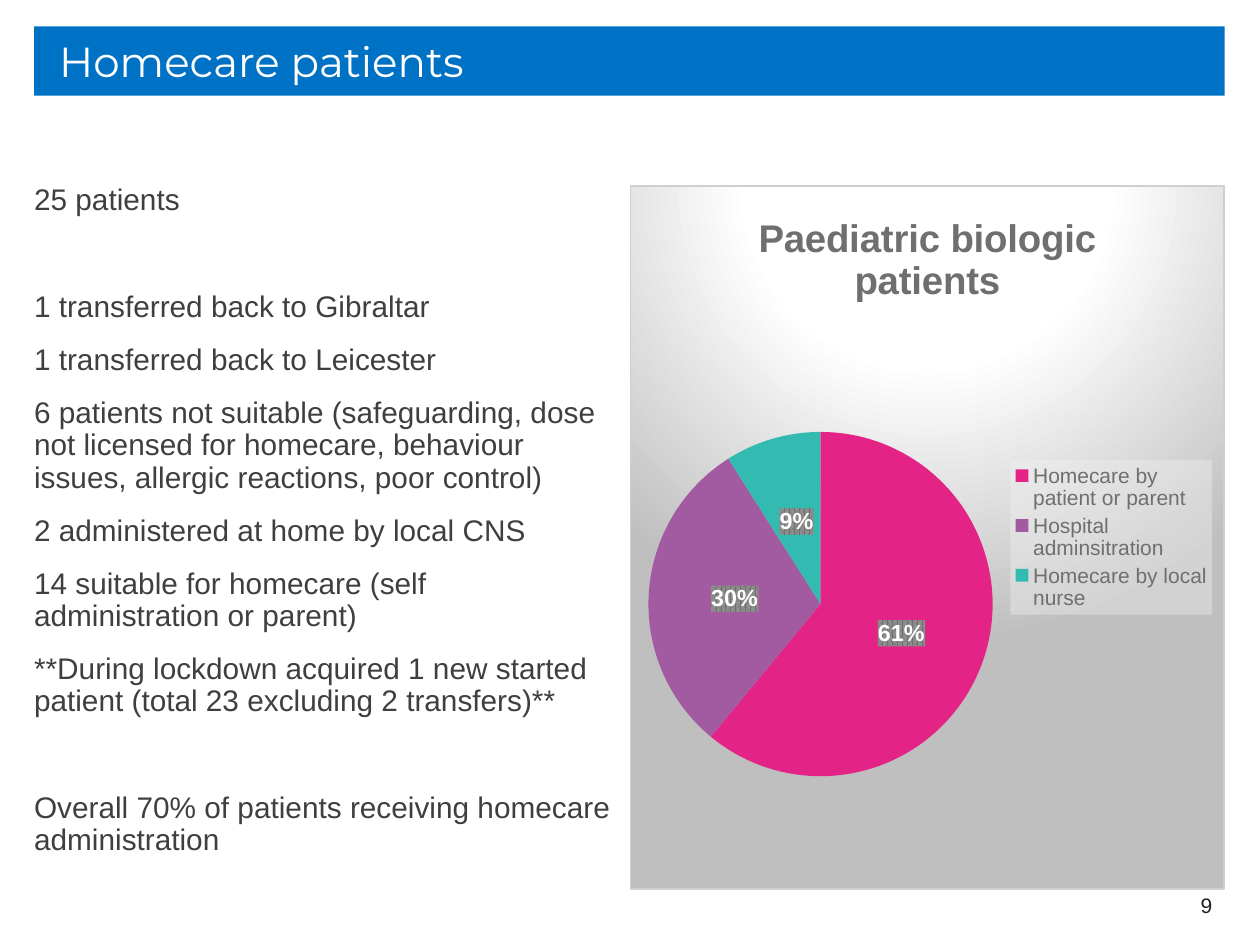
from dataclasses import dataclass

from lxml.etree import fromstring
from pptx import Presentation
from pptx.chart.data import CategoryChartData
from pptx.dml.color import RGBColor
from pptx.enum.chart import XL_CHART_TYPE, XL_LABEL_POSITION, XL_LEGEND_POSITION
from pptx.enum.shapes import MSO_SHAPE
from pptx.enum.text import MSO_ANCHOR, PP_ALIGN
from pptx.oxml.ns import qn
from pptx.util import Inches, Pt

NAMESPACES = (
    'xmlns:c="http://schemas.openxmlformats.org/drawingml/2006/chart" '
    'xmlns:a="http://schemas.openxmlformats.org/drawingml/2006/main"'
)
LEFT, RIGHT = 0.27, 9.72
CONTENT_TOP, CONTENT_HEIGHT = 1.47, 5.59
CHART_LEFT = 5
CHART_TITLE = "Paediatric biologic patients"


@dataclass
class Finding:
    text: str
    starts_group: bool = False


@dataclass
class Slice:
    label: str
    percent: int
    color: str


FINDINGS = [
    Finding("25 patients"),
    Finding("1 transferred back to Gibraltar", starts_group=True),
    Finding("1 transferred back to Leicester"),
    Finding("6 patients not suitable (safeguarding, dose not licensed for homecare, "
            "behaviour issues, allergic reactions, poor control)"),
    Finding("2 administered at home by local CNS"),
    Finding("14 suitable for homecare (self administration or parent)"),
    Finding("**During lockdown acquired 1 new started patient "
            "(total 23 excluding 2 transfers)**"),
    Finding("Overall 70% of patients receiving homecare administration", starts_group=True),
]
SLICES = [
    Slice("Homecare by patient or parent", 61, "E32486"),
    Slice("Hospital adminsitration", 30, "A25BA0"),
    Slice("Homecare by local nurse", 9, "33BBB1"),
]


def rgb(color: str) -> RGBColor:
    return RGBColor.from_string(color)


def style_font(font, size: float, color: str, name: str = "Arial", bold: bool = False) -> None:
    font.size, font.name, font.bold = Pt(size), name, bold
    font.color.rgb = rgb(color)


def chart_xml(body: str):
    """Parse a chart element after declaring its namespaces on the root."""
    tag, rest = body.split(">", 1)
    return fromstring(f"{tag} {NAMESPACES}>{rest}")


def manual_layout(x: float, y: float, w: float, h: float, target: str = ""):
    return chart_xml(
        f'<c:layout><c:manualLayout>{target}<c:xMode val="edge"/><c:yMode val="edge"/>'
        f'<c:x val="{x}"/><c:y val="{y}"/><c:w val="{w}"/><c:h val="{h}"/>'
        "</c:manualLayout></c:layout>"
    )


def replace_layout(parent, layout, index: int) -> None:
    for existing in parent.findall(qn("c:layout")):
        parent.remove(existing)
    parent.insert(index, layout)


def add_title_bar(slide) -> None:
    bar = slide.shapes.add_shape(MSO_SHAPE.RECTANGLE, Inches(LEFT), Inches(0.21),
                                 Inches(RIGHT - LEFT), Inches(0.55))
    bar.shadow.inherit = False
    bar.fill.solid()
    bar.fill.fore_color.rgb = rgb("0072C6")
    bar.line.fill.background()
    frame = bar.text_frame
    frame.text = "Homecare patients"
    frame.margin_left = Inches(0.2)
    frame.vertical_anchor = MSO_ANCHOR.MIDDLE
    heading = frame.paragraphs[0]
    heading.alignment = PP_ALIGN.LEFT
    style_font(heading.runs[0].font, 24, "FFFFFF", "Montserrat")


def add_findings(slide) -> None:
    frame = slide.shapes.add_textbox(Inches(LEFT), Inches(CONTENT_TOP),
                                     Inches(4.65), Inches(CONTENT_HEIGHT)).text_frame
    frame.word_wrap = True
    frame.margin_left = frame.margin_right = frame.margin_top = frame.margin_bottom = 0
    frame.text = "\n".join(finding.text for finding in FINDINGS)
    for finding, paragraph in zip(FINDINGS, frame.paragraphs):
        paragraph.line_spacing = 0.9
        paragraph.space_before = Pt(36.5 if finding.starts_group else 6)
        paragraph.space_after = Pt(6)
        style_font(paragraph.runs[0].font, 17, "3F3F3F")


def add_page_number(slide) -> None:
    frame = slide.shapes.add_textbox(Inches(7.39), Inches(6.98),
                                     Inches(RIGHT - 7.39), Inches(0.4)).text_frame
    frame.word_wrap = True
    frame.vertical_anchor = MSO_ANCHOR.MIDDLE
    frame.text = "9"
    frame.paragraphs[0].alignment = PP_ALIGN.RIGHT
    style_font(frame.paragraphs[0].runs[0].font, 12, "202020")


def add_patient_chart(slide) -> None:
    patient_data = CategoryChartData()
    patient_data.categories = [part.label for part in SLICES]
    patient_data.add_series(CHART_TITLE, [part.percent for part in SLICES])
    chart = slide.shapes.add_chart(
        XL_CHART_TYPE.PIE, Inches(CHART_LEFT), Inches(CONTENT_TOP),
        Inches(RIGHT - CHART_LEFT), Inches(CONTENT_HEIGHT), patient_data).chart
    style_font(chart.font, 10, "3F3F3F")

    # Title and legend
    chart.has_title = True
    chart.chart_title.text_frame.text = CHART_TITLE
    style_font(chart.chart_title.text_frame.paragraphs[0].runs[0].font, 22, "6F6F6F", bold=True)
    chart.has_legend = True
    chart.legend.position = XL_LEGEND_POSITION.RIGHT
    chart.legend.include_in_layout = False
    style_font(chart.legend.font, 12, "6F6F6F")

    # Slices and percentage labels
    pie = chart.plots[0]
    pie.vary_by_categories = True
    for index, part in enumerate(SLICES):
        fill = pie.series[0].points[index].format.fill
        fill.solid()
        fill.fore_color.rgb = rgb(part.color)
    labels = pie.series[0].data_labels
    labels.show_percentage = True
    labels.show_value = False
    labels.number_format, labels.number_format_is_linked = "0%", False
    labels.position = XL_LABEL_POSITION.CENTER
    style_font(labels.font, 13.3, "FFFFFF", bold=True)

    # Places of the pie and the legend inside the chart
    root = chart.element
    plot_area = root.find(".//" + qn("c:plotArea"))
    replace_layout(plot_area, manual_layout(
        0.03, 0.35, 0.58, 0.49, '<c:layoutTarget val="inner"/>'), 0)
    legend = root.find(".//" + qn("c:legend"))
    replace_layout(legend, manual_layout(0.64, 0.39, 0.34, 0.22), 1)

    # Backgrounds of the legend, the labels and the whole chart
    legend.find(qn("c:txPr")).addprevious(chart_xml(
        '<c:spPr><a:solidFill><a:srgbClr val="F2F2F2"><a:alpha val="39000"/></a:srgbClr>'
        "</a:solidFill></c:spPr>"))
    series_labels = root.find(".//" + qn("c:ser")).find(qn("c:dLbls"))
    series_labels.find(qn("c:txPr")).addprevious(chart_xml(
        '<c:spPr><a:pattFill prst="pct75"><a:fgClr><a:srgbClr val="6F6F6F"/></a:fgClr>'
        '<a:bgClr><a:srgbClr val="8F8F8F"/></a:bgClr></a:pattFill></c:spPr>'))
    root.find(qn("c:chart")).addnext(chart_xml(
        "<c:spPr><a:gradFill><a:gsLst>"
        '<a:gs pos="0"><a:srgbClr val="FFFFFF"/></a:gs>'
        '<a:gs pos="39000"><a:srgbClr val="FFFFFF"/></a:gs>'
        '<a:gs pos="100000"><a:srgbClr val="BFBFBF"/></a:gs></a:gsLst>'
        '<a:path path="circle"><a:fillToRect l="50000" t="-80000" r="50000" b="180000"/></a:path>'
        '</a:gradFill><a:ln w="9525"><a:solidFill><a:srgbClr val="CFCFCF"/></a:solidFill></a:ln>'
        "</c:spPr>"))


def main() -> None:
    presentation = Presentation()
    presentation.slide_width, presentation.slide_height = Inches(10), Inches(7.5)
    slide = presentation.slides.add_slide(presentation.slide_layouts[6])
    add_title_bar(slide)
    add_page_number(slide)
    add_findings(slide)
    add_patient_chart(slide)
    presentation.save("out.pptx")


if __name__ == "__main__":
    main()
